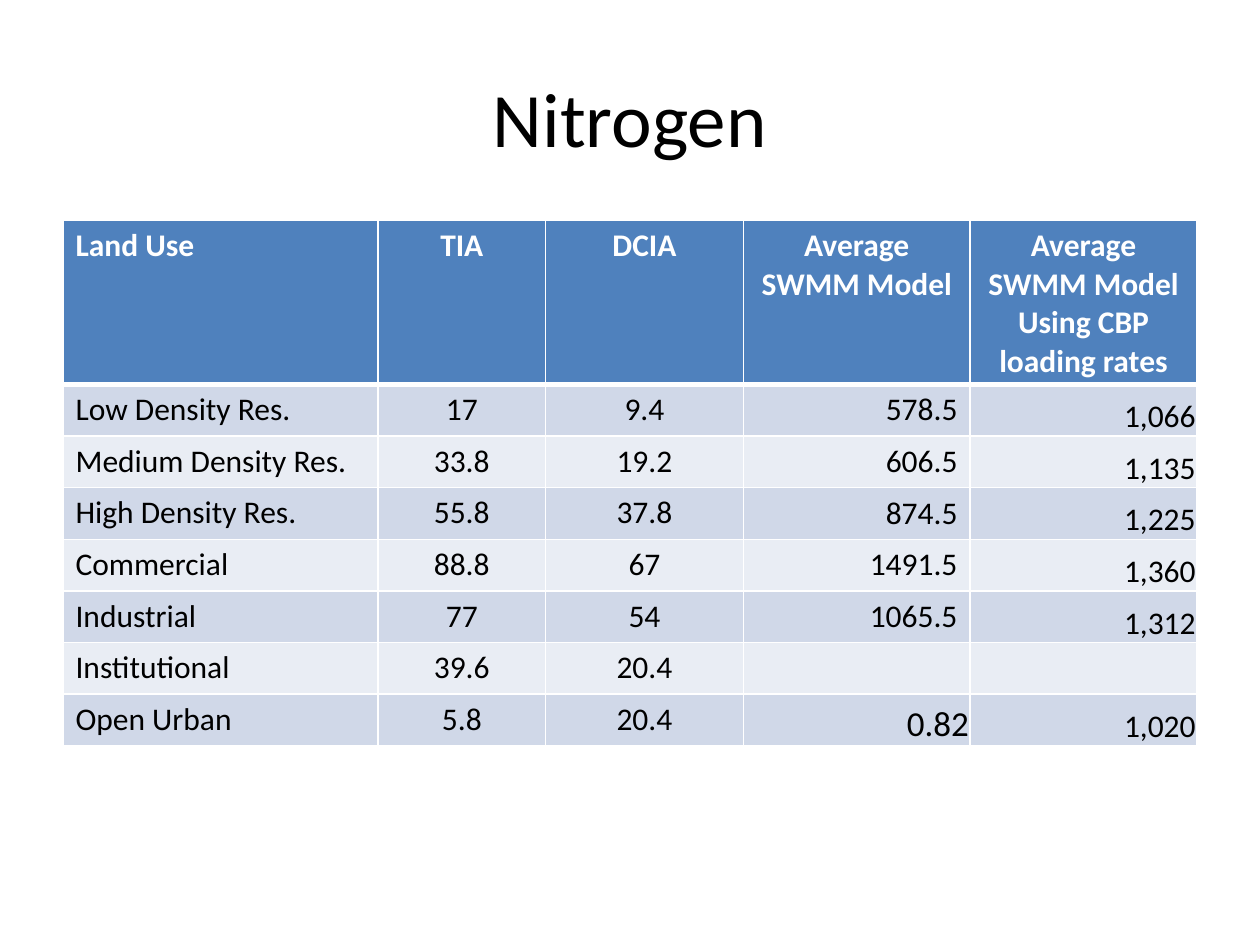
from dataclasses import dataclass

from lxml import etree
from pptx import Presentation
from pptx.dml.color import RGBColor
from pptx.enum import text
from pptx.oxml import ns
from pptx.util import Inches, Pt

ALIGN, ANCHOR = text.PP_ALIGN, text.MSO_ANCHOR


@dataclass(frozen=True)
class Theme:
    font: str = "Calibri"
    ink: str = "000000"
    white: str = "FFFFFF"
    header: str = "4F81BD"
    bands: tuple = ("D0D8E8", "E9EDF4")
    title_size: int = 44
    body_size: int = 18
    large_size: int = 20
    rule: int = 1
    header_rule: int = 3


THEME = Theme()

COLUMN_WIDTHS = (2.5, 1.33, 1.57, 1.8, 1.8)
ROW_HEIGHT = 0.41
ROWS = (
    ("Land Use", "TIA", "DCIA", "Average SWMM Model",
     "Average SWMM Model Using CBP loading rates"),
    ("Low Density Res.", "17", "9.4", "578.5", "1,066"),
    ("Medium Density Res.", "33.8", "19.2", "606.5", "1,135"),
    ("High Density Res.", "55.8", "37.8", "874.5", "1,225"),
    ("Commercial", "88.8", "67", "1491.5", "1,360"),
    ("Industrial", "77", "54", "1065.5", "1,312"),
    ("Institutional", "39.6", "20.4", "", ""),
    ("Open Urban", "5.8", "20.4", "0.82", "1,020"),
)
LARGE_CELL = (7, 3)

LEFT = {"align": ALIGN.LEFT, "anchor": ANCHOR.TOP}
CENTER = {"align": ALIGN.CENTER, "anchor": ANCHOR.TOP}
MODEL = {"align": ALIGN.RIGHT, "anchor": ANCHOR.MIDDLE}
TIGHT = {"align": ALIGN.RIGHT, "anchor": ANCHOR.BOTTOM, "margins": {
    "margin_left": Inches(0.01), "margin_top": Inches(0.01),
    "margin_right": Inches(0.01), "margin_bottom": Inches(0)}}
HEADER_FORMATS = (LEFT, CENTER, CENTER, CENTER, CENTER)
BODY_FORMATS = (LEFT, CENTER, CENTER, MODEL, TIGHT)


def set_attributes(target, values):
    for name, value in values.items():
        setattr(target, name, value)


def write_text(tf, words, align, size, color, bold=False):
    p = tf.paragraphs[0]
    p.alignment = align
    if not words:
        return
    r = p.add_run()
    r.text = words
    set_attributes(r.font, {"name": THEME.font, "size": Pt(size), "bold": bold})
    r.font.color.rgb = RGBColor.from_string(color)


def set_borders(cell, **widths):
    """Draw white borders; widths in points are keyed by side: L, R, T, B."""
    tc_pr = cell._tc.get_or_add_tcPr()
    for side in "LRTB":
        width = Pt(widths.get(side, THEME.rule))
        ln = etree.SubElement(tc_pr, ns.qn(f"a:ln{side}"), w=str(width))
        fill = etree.SubElement(ln, ns.qn("a:solidFill"))
        etree.SubElement(fill, ns.qn("a:srgbClr"), val=THEME.white)


def format_cell(cell, row, column, words):
    is_header = row == 0
    is_large = (row, column) == LARGE_CELL
    layout = (HEADER_FORMATS if is_header else BODY_FORMATS)[column]
    if is_large:
        layout = TIGHT
    if words:
        cell.vertical_anchor = layout["anchor"]
        set_attributes(cell, layout.get("margins", {}))
    thick_side = {0: {"B": THEME.header_rule}, 1: {"T": THEME.header_rule}}
    set_borders(cell, **thick_side.get(row, {}))
    cell.fill.solid()
    cell.fill.fore_color.rgb = RGBColor.from_string(
        THEME.header if is_header else THEME.bands[(row - 1) % 2])
    write_text(cell.text_frame, words, layout["align"],
               THEME.large_size if is_large else THEME.body_size,
               THEME.white if is_header else THEME.ink, is_header)


def add_title(s, left, top, width, height):
    tf = s.shapes.add_textbox(left, top, width, height).text_frame
    set_attributes(tf, {"word_wrap": True, "vertical_anchor": ANCHOR.MIDDLE})
    write_text(tf, "Nitrogen", ALIGN.CENTER, THEME.title_size, THEME.ink)


def add_land_use_table(s, left, top, width):
    """Place the table, sharing the width in the proportions of the columns."""
    height = Inches(ROW_HEIGHT * len(ROWS))
    table = s.shapes.add_table(len(ROWS), len(COLUMN_WIDTHS),
                               left, top, width, height).table
    for column, share in zip(table.columns, COLUMN_WIDTHS):
        column.width = int(width * share / sum(COLUMN_WIDTHS))
    for i, values in enumerate(ROWS):
        for j, words in enumerate(values):
            format_cell(table.cell(i, j), i, j, words)


def main():
    prs = Presentation()
    set_attributes(prs, {"slide_width": Inches(10), "slide_height": Inches(7.5)})
    s = prs.slides.add_slide(prs.slide_layouts[6])
    add_title(s, Inches(0.5), Inches(0.3), Inches(9), Inches(1.25))
    add_land_use_table(s, Inches(0.5), Inches(1.75), Inches(9))
    prs.save("out.pptx")


if __name__ == "__main__":
    main()
